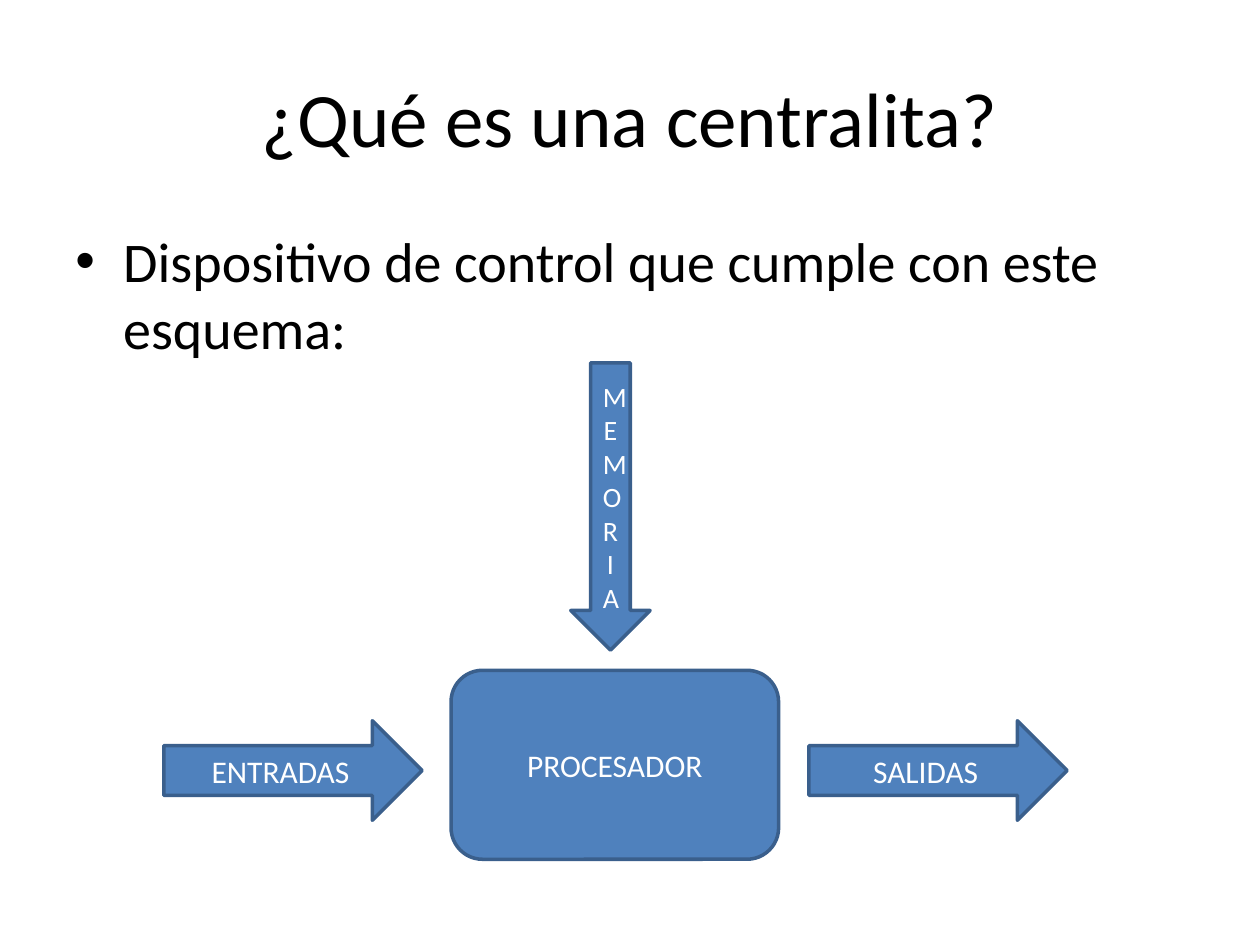
from dataclasses import dataclass

from lxml import etree
from pptx import Presentation
from pptx import util as u
from pptx.dml.color import RGBColor
from pptx.enum import shapes, text
from pptx.oxml import ns


@dataclass(frozen=True)
class Theme:
    font: str = "Calibri"
    ink: str = "000000"
    fill: str = "4F81BD"
    line: str = "3A5F8C"
    on_fill: str = "FFFFFF"
    title: int = 44
    body: int = 32
    label: int = 18
    small_label: int = 16
    line_width: int = 2


THEME = Theme()
SHAPE = shapes.MSO_SHAPE


def rgb(value):
    return RGBColor.from_string(value)


def set_text(sp, content, size, color, align, anchor):
    tf = sp.text_frame
    tf.word_wrap = True
    tf.vertical_anchor = anchor
    tf.text = content
    p = tf.paragraphs[0]
    p.alignment = align
    font = p.runs[0].font
    font.name = THEME.font
    font.size = u.Pt(size)
    font.color.rgb = rgb(color)
    return p


def add_text(s, box, content, size, align, anchor):
    sp = s.shapes.add_textbox(*map(u.Inches, box))
    return set_text(sp, content, size, THEME.ink, align, anchor)


def add_bullet(p, indent):
    pPr = p._p.get_or_add_pPr()
    pPr.set("marL", str(u.Inches(indent)))
    pPr.set("indent", str(-u.Inches(indent)))
    etree.SubElement(pPr, ns.qn("a:buFont"), typeface="Arial")
    etree.SubElement(pPr, ns.qn("a:buChar"), char="•")


def add_block(s, kind, box, label, size=THEME.label):
    sp = s.shapes.add_shape(kind, *map(u.Inches, box))
    sp.shadow.inherit = False
    sp.fill.solid()
    sp.fill.fore_color.rgb = rgb(THEME.fill)
    sp.line.color.rgb = rgb(THEME.line)
    sp.line.width = u.Pt(THEME.line_width)
    set_text(sp, label, size, THEME.on_fill,
             text.PP_ALIGN.CENTER, text.MSO_ANCHOR.MIDDLE)


def main():
    prs = Presentation()
    prs.slide_width, prs.slide_height = u.Inches(10), u.Inches(7.5)
    s = prs.slides.add_slide(prs.slide_layouts[6])

    add_text(s, (0.5, 0.3, 9, 1.25), "¿Qué es una centralita?", THEME.title,
             text.PP_ALIGN.CENTER, text.MSO_ANCHOR.MIDDLE)
    p = add_text(s, (0.5, 1.75, 9, 4.95),
                 "Dispositivo de control que cumple con este esquema:",
                 THEME.body, text.PP_ALIGN.LEFT, text.MSO_ANCHOR.TOP)
    add_bullet(p, 0.38)

    for left, label in ((1.3, "ENTRADAS"), (6.42, "SALIDAS")):
        add_block(s, SHAPE.RIGHT_ARROW, (left, 5.72, 2.05, 0.79), label)
    add_block(s, SHAPE.ROUNDED_RECTANGLE, (3.58, 5.32, 2.6, 1.5), "PROCESADOR")
    # The arrow is narrow enough to wrap its label one letter per line.
    add_block(s, SHAPE.DOWN_ARROW, (4.53, 2.88, 0.63, 2.28), "MEMORIA",
              THEME.small_label)

    prs.save("out.pptx")


if __name__ == "__main__":
    main()
